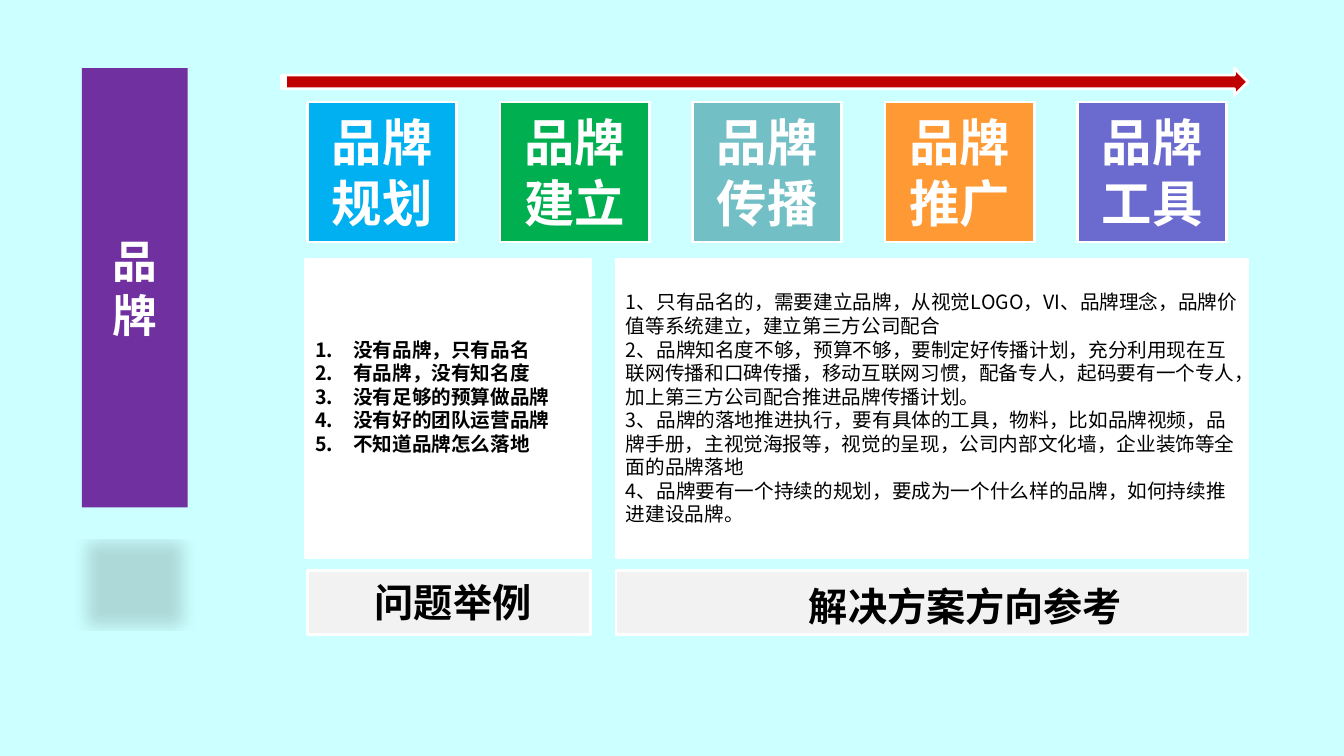
from lxml import etree
from pptx import Presentation
from pptx.dml.color import RGBColor
from pptx.enum import shapes, text
from pptx.oxml import ns
from pptx.util import Pt

FONT = "Noto Sans CJK SC"
HUES = {
    "sky": "CCFFFF", "white": "FFFFFF", "black": "000000", "gray": "F2F2F2",
    "purple": "7030A0", "red": "C00000", "blue": "00B0F0", "green": "00B050",
    "teal": "72BFC5", "orange": "FF9933", "indigo": "6B6BCF",
}
KIND = shapes.MSO_SHAPE
CARDS = [("品牌规划", "blue"), ("品牌建立", "green"), ("品牌传播", "teal"),
         ("品牌推广", "orange"), ("品牌工具", "indigo")]
ISSUES = ["没有品牌，只有品名", "有品牌，没有知名度", "没有足够的预算做品牌",
          "没有好的团队运营品牌", "不知道品牌怎么落地"]
PLANS = [
    "1、只有品名的，需要建立品牌，从视觉LOGO，VI、品牌理念，品牌价值等系统建立，建立第三方公司配合",
    "2、品牌知名度不够，预算不够，要制定好传播计划，充分利用现在互联网传播和口碑传播，"
    "移动互联网习惯，配备专人，起码要有一个专人，加上第三方公司配合推进品牌传播计划。",
    "3、品牌的落地推进执行，要有具体的工具，物料，比如品牌视频，品牌手册，主视觉海报等，"
    "视觉的呈现，公司内部文化墙，企业装饰等全面的品牌落地",
    "4、品牌要有一个持续的规划，要成为一个什么样的品牌，如何持续推进建设品牌。",
]


def color(name):
    """Return the named colour."""
    return RGBColor.from_string(HUES[name])


def add_node(parent, tag, **attrs):
    """Append a drawing element to a parent."""
    return etree.SubElement(parent, ns.qn(tag), attrs)


def write(shape, lines, size, hue="black", bold=True, center=True):
    """Fill a shape with styled paragraphs."""
    frame = shape.text_frame
    frame.text = "\n".join(lines)
    frame.word_wrap = True
    frame.vertical_anchor = text.MSO_ANCHOR.MIDDLE
    for para in frame.paragraphs:
        para.alignment = text.PP_ALIGN.CENTER if center else text.PP_ALIGN.LEFT
        for run in para.runs:
            run.font.size = Pt(size)
            run.font.bold = bold
            run.font.name = FONT
            run.font.color.rgb = color(hue)
            add_node(run.font._element, "a:ea", typeface=FONT)


def add_box(slide, kind, spot, fill, edge=True):
    """Add a filled shape with an optional white edge."""
    box = slide.shapes.add_shape(kind, *map(Pt, spot))
    box.shadow.inherit = False
    box.fill.solid()
    box.fill.fore_color.rgb = color(fill)
    if edge:
        box.line.color.rgb = color("white")
        box.line.width = Pt(2)
    else:
        box.line.fill.background()
    if kind == KIND.ROUNDED_RECTANGLE:
        box.adjustments[0] = 0
    return box


def add_title(slide, spot, words, wrap):
    """Add a bold caption."""
    title = slide.shapes.add_textbox(*map(Pt, spot))
    write(title, [words], 28)
    title.text_frame.word_wrap = wrap
    title.text_frame.vertical_anchor = text.MSO_ANCHOR.TOP
    title.text_frame.auto_size = text.MSO_AUTO_SIZE.SHAPE_TO_FIT_TEXT


def cast_shadow(shape):
    """Cast a flipped soft shadow below a shape."""
    effects = shape._element.spPr.find(ns.qn("a:effectLst"))
    shade = add_node(effects, "a:outerShdw", blurRad=str(Pt(12)), dist=str(Pt(25)),
                     dir="5400000", sx="90000", sy="-19000", rotWithShape="0")
    tint = add_node(shade, "a:srgbClr", val=HUES["black"])
    add_node(tint, "a:alpha", val="15000")


def number(shape):
    """Number the paragraphs of a shape."""
    for para in shape.text_frame.paragraphs:
        props = para._p.get_or_add_pPr()
        props.set("marL", str(Pt(27)))
        props.set("indent", str(Pt(-27)))
        add_node(props, "a:buFont", typeface="+mj-lt")
        add_node(props, "a:buAutoNum", type="arabicPeriod")


def main():
    """Build the slide and save it."""
    deck = Presentation()
    deck.slide_width, deck.slide_height = Pt(960), Pt(540)
    slide = deck.slides.add_slide(deck.slide_layouts[6])
    slide.background.fill.solid()
    slide.background.fill.fore_color.rgb = color("sky")

    add_box(slide, KIND.RECTANGLE, (440, 407.5, 451.5, 46), "gray")
    add_box(slide, KIND.RECTANGLE, (219.6, 407.5, 202.4, 46), "gray")

    issues = add_box(slide, KIND.ROUNDED_RECTANGLE, (218.2, 185, 203.8, 213), "white")
    write(issues, ISSUES, 14, center=False)
    issues.text_frame.margin_bottom = Pt(20.4)
    number(issues)
    plans = add_box(slide, KIND.ROUNDED_RECTANGLE, (440, 185, 451.5, 213), "white")
    write(plans, PLANS, 14, bold=False, center=False)

    add_title(slide, (260, 409.7, 127.4, 41), "问题举例", False)
    add_title(slide, (541.4, 412.6, 296.6, 41), "解决方案方向参考", True)

    banner = add_box(slide, KIND.RECTANGLE, (58.4, 48.7, 75.6, 313.8), "purple", False)
    write(banner, ["品牌"], 32, "white")
    cast_shadow(banner)

    for i, (name, hue) in enumerate(CARDS):
        spot = (219.6 + 137.5 * i, 72.9, 106.6, 100)
        card = add_box(slide, KIND.ROUNDED_RECTANGLE, spot, hue)
        write(card, [name], 36, "white")

    add_box(slide, KIND.STRIPED_RIGHT_ARROW, (200.9, 48.7, 690.6, 19.6), "red")
    deck.save("out.pptx")


if __name__ == "__main__":
    main()
